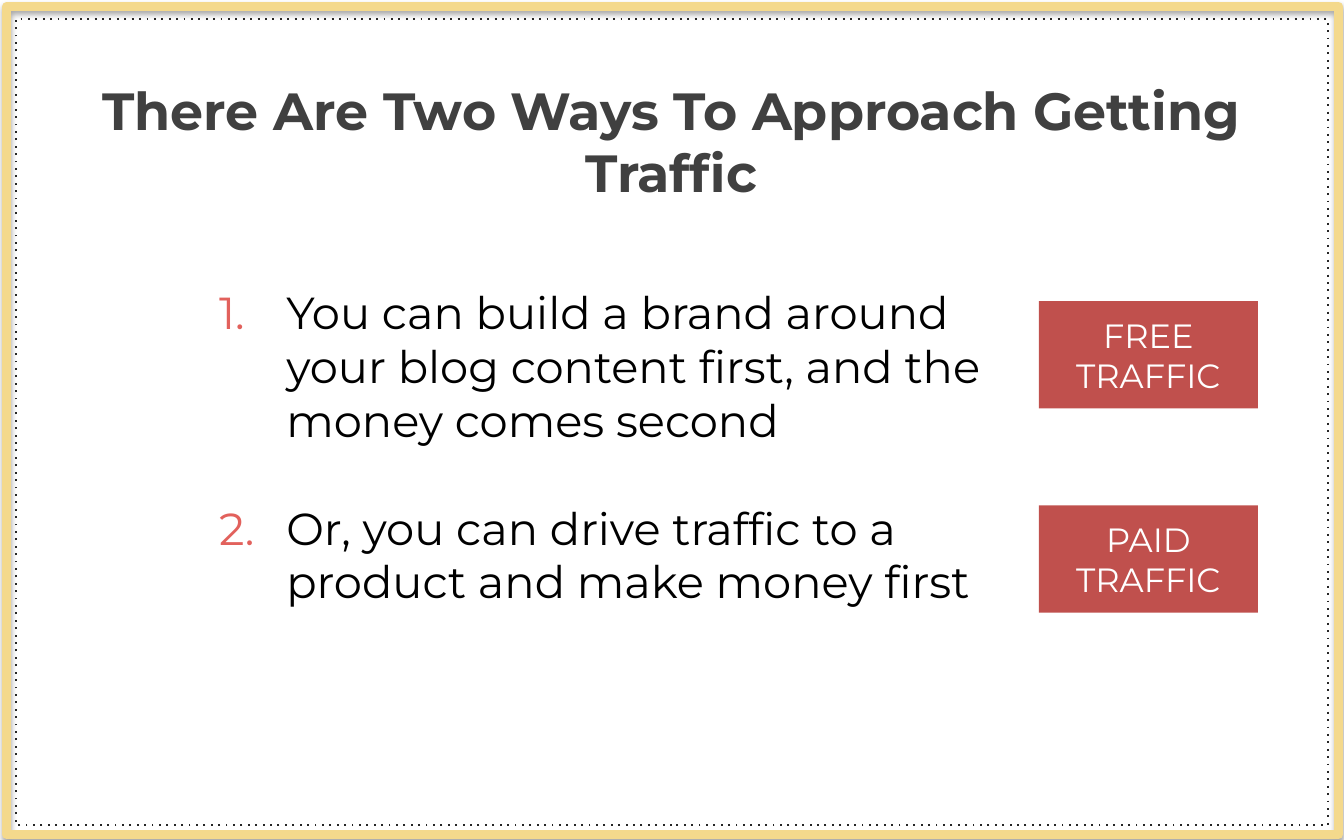
import pptx
import pptx.dml.color
import pptx.enum.dml
import pptx.enum.shapes
import pptx.enum.text
import pptx.oxml
import pptx.oxml.ns
import pptx.util

Inches = pptx.util.Inches
Pt = pptx.util.Pt
RGBColor = pptx.dml.color.RGBColor
Align = pptx.enum.text.PP_ALIGN
Anchor = pptx.enum.text.MSO_ANCHOR

FONT = "Montserrat"
WHITE = RGBColor(0xFF, 0xFF, 0xFF)
BLACK = RGBColor(0x00, 0x00, 0x00)
TITLE_GRAY = RGBColor(0x40, 0x40, 0x40)
DOT_GRAY = RGBColor(0x26, 0x26, 0x26)
FRAME_YELLOW = RGBColor(0xF4, 0xD9, 0x8C)
NUMBER_RED = RGBColor(0xE2, 0x61, 0x5C)
LABEL_RED = RGBColor(0xC0, 0x50, 0x4D)

WAYS = [
    "You can build a brand around your blog content first, and the money comes second",
    "Or, you can drive traffic to a product and make money first",
]
LABELS = ["FREE TRAFFIC", "PAID TRAFFIC"]


def add_xml(parent, tag, content="", **attributes):
    """Append a DrawingML element with the given attributes to parent."""
    values = "".join(f' {name}="{value}"' for name, value in attributes.items())
    namespace = pptx.oxml.ns.nsdecls("a")
    parent.append(pptx.oxml.parse_xml(f"<a:{tag} {namespace}{values}>{content}</a:{tag}>"))


def place(shape, left, top, width, height):
    shape.left, shape.top = Inches(left), Inches(top)
    shape.width, shape.height = Inches(width), Inches(height)


def format_para(para, size, color, align, bold=False):
    para.alignment = align
    para.line_spacing = 1.0
    para.space_before = Pt(0)
    for span in para.runs:
        span.font.name = FONT
        span.font.size = Pt(size)
        span.font.bold = bold
        span.font.color.rgb = color


def add_rectangle(slide, left, top, width, height):
    box = slide.shapes.add_shape(
        pptx.enum.shapes.MSO_SHAPE.RECTANGLE,
        Inches(left), Inches(top), Inches(width), Inches(height),
    )
    box.shadow.inherit = False
    return box


def add_frame(slide, left, top, width, height, color, weight):
    frame = add_rectangle(slide, left, top, width, height)
    frame.fill.background()
    frame.line.color.rgb = color
    frame.line.width = Pt(weight)
    return frame


def add_borders(slide):
    outer = add_frame(slide, 0.05, 0.05, 9.91, 6.16, FRAME_YELLOW, 5)
    effects = outer.element.spPr.find(pptx.oxml.ns.qn("a:effectLst"))
    add_xml(
        effects, "outerShdw",
        '<a:srgbClr val="000000"><a:alpha val="35000"/></a:srgbClr>',
        blurRad=Pt(3.1), dist=Pt(1.8), dir=90 * 60000, rotWithShape=0,
    )
    inner = add_frame(slide, 0.12, 0.14, 9.76, 6, DOT_GRAY, 1)
    inner.line.dash_style = pptx.enum.dml.MSO_LINE.ROUND_DOT
    inner.element.spPr.xpath("a:ln/a:prstDash")[0].set("val", "dot")


def prepare_placeholder(shape, left, top, width, height):
    place(shape, left, top, width, height)
    frame = shape.text_frame
    frame.word_wrap = True
    frame.auto_size = pptx.enum.text.MSO_AUTO_SIZE.NONE
    frame.vertical_anchor = Anchor.TOP
    return frame


def fill_title(slide):
    frame = prepare_placeholder(slide.shapes.title, 0.12, 0.53, 9.75, 1.5)
    frame.text = "There Are Two Ways To Approach Getting Traffic"
    format_para(frame.paragraphs[0], 28, TITLE_GRAY, Align.CENTER, bold=True)


def number_para(para):
    properties = para._p.get_or_add_pPr()
    properties.set("marL", str(Inches(0.5)))
    properties.set("indent", str(-Inches(0.5)))
    add_xml(properties, "buClr", f'<a:srgbClr val="{NUMBER_RED}"/>')
    add_xml(properties, "buFont", typeface=FONT)
    add_xml(properties, "buAutoNum", type="arabicPeriod")


def fill_ways(slide):
    frame = prepare_placeholder(slide.placeholders[1], 1.53, 2.07, 6.11, 2.52)
    frame.text = "\n".join(WAYS)
    for index, para in enumerate(frame.paragraphs):
        number_para(para)
        format_para(para, 24, BLACK, Align.LEFT)
        if index:
            para.space_before = Pt(29)


def add_label(slide, text, top):
    label = add_rectangle(slide, 7.73, top, 1.63, 0.8)
    label.fill.solid()
    label.fill.fore_color.rgb = LABEL_RED
    label.line.fill.background()
    frame = label.text_frame
    frame.word_wrap = True
    frame.vertical_anchor = Anchor.MIDDLE
    frame.text = text
    format_para(frame.paragraphs[0], 18, WHITE, Align.CENTER)


def main():
    deck = pptx.Presentation()
    deck.slide_width, deck.slide_height = Inches(10), Inches(6.25)
    slide = deck.slides.add_slide(deck.slide_layouts[1])
    slide.background.fill.solid()
    slide.background.fill.fore_color.rgb = WHITE
    add_borders(slide)
    fill_title(slide)
    fill_ways(slide)
    for index, text in enumerate(LABELS):
        add_label(slide, text, 2.24 + index * 1.52)
    deck.save("out.pptx")


if __name__ == "__main__":
    main()
